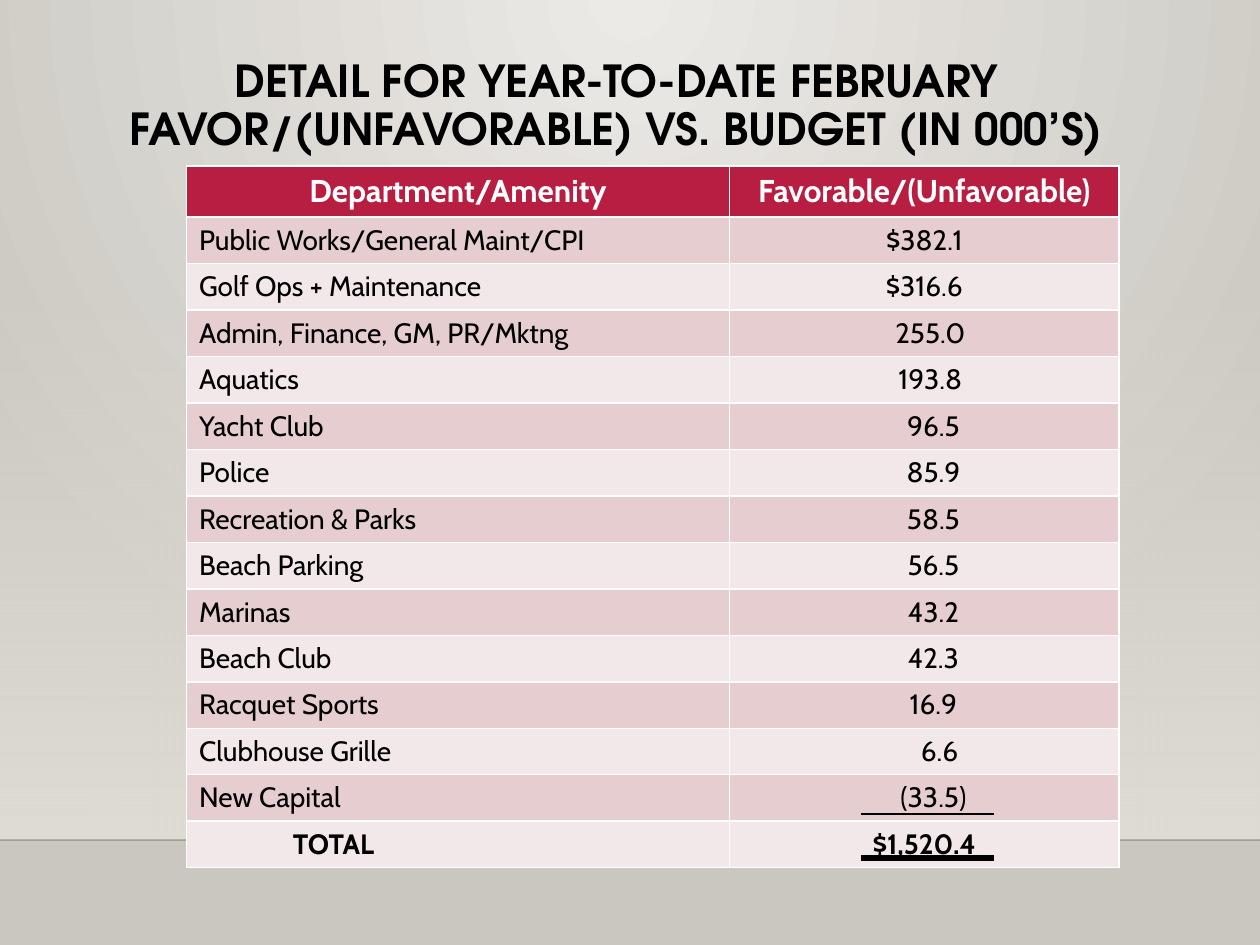
import dataclasses

import pptx
import pptx.dml.color
import pptx.enum.shapes
import pptx.enum.text
import pptx.oxml.ns
import pptx.oxml.xmlchemy
import pptx.util

Pt = pptx.util.Pt
qn = pptx.oxml.ns.qn
new_element = pptx.oxml.xmlchemy.OxmlElement
ALIGN = pptx.enum.text.PP_ALIGN


@dataclasses.dataclass(frozen=True)
class Theme:
    heading_font: str = "TeX Gyre Adventor"
    body_font: str = "Cabin"
    title_size: float = 25.2
    header_size: float = 18
    row_size: float = 16
    ink: str = "000000"
    white: str = "FFFFFF"
    accent: str = "B71E42"
    bands: tuple = ("E6CDCF", "F3E8E9")
    backdrop: tuple = ("ECEAE7", "CAC7C1")
    wall: str = "DFDBD5"


THEME = Theme()
SLIDE_W, SLIDE_H = 720, 540
HEADER_H, ROW_H = 29, 26.57
CELL_MARGIN = 7.2

HEADINGS = ("Department/Amenity", "Favorable/(Unfavorable)")
# Department, amount, indent of the amount
ROWS = [
    ("Public Works/General Maint/CPI", "$382.1", 0),
    ("Golf Ops + Maintenance", "$316.6", 0),
    ("Admin, Finance, GM, PR/Mktng", "255.0", 7),
    ("Aquatics", "193.8", 7),
    ("Yacht Club", "96.5", 10.5),
    ("Police", "85.9", 10.5),
    ("Recreation & Parks", "58.5", 10.5),
    ("Beach Parking", "56.5", 10.5),
    ("Marinas", "43.2", 10.5),
    ("Beach Club", "42.3", 10.5),
    ("Racquet Sports", "16.9", 10.5),
    ("Clubhouse Grille", "6.6", 17.5),
    ("New Capital", "(33.5)", 10.5),
]
TOTAL = ("TOTAL", "$1,520.4")
TOTAL_INDENT = 53.5


def rgb(value):
    return pptx.dml.color.RGBColor.from_string(value)


def write(frame, text, *, size, font=THEME.body_font, color=THEME.ink,
          bold=False, align=ALIGN.LEFT, spacing=None):
    paragraph = frame.paragraphs[0]
    paragraph.text = text
    paragraph.alignment = align
    if spacing:
        paragraph.line_spacing = spacing
    for run in paragraph.runs:
        run.font.name = font
        run.font.size = Pt(size)
        run.font.bold = bold
        run.font.color.rgb = rgb(color)


def set_gradient(fill, colors):
    fill.gradient()
    for stop, color in zip(fill.gradient_stops, colors):
        stop.color.rgb = rgb(color)


def set_alpha(color_element, percent):
    alpha = new_element("a:alpha")
    alpha.set("val", str(percent * 1000))
    color_element.append(alpha)


def add_rule(slide, x1, x2, y, weight, alpha=None):
    rule = slide.shapes.add_connector(
        pptx.enum.shapes.MSO_CONNECTOR.STRAIGHT, Pt(x1), Pt(y), Pt(x2), Pt(y))
    rule.line.color.rgb = rgb(THEME.ink)
    rule.line.width = Pt(weight)
    if alpha is not None:
        set_alpha(next(rule.element.iter(qn("a:srgbClr"))), alpha)
    rule.element.spPr.append(new_element("a:effectLst"))


def add_backdrop(slide, left, top, width, height):
    # Radial light from the top centre
    set_gradient(slide.background.fill, THEME.backdrop)
    gradient = next(slide.element.iter(qn("a:gradFill")))
    gradient.remove(gradient.find(qn("a:lin")))
    glow = new_element("a:path")
    glow.set("path", "circle")
    focus = new_element("a:fillToRect")
    for side, percent in zip("ltrb", (43, 0, 43, 100)):
        focus.set(side, str(percent * 1000))
    glow.append(focus)
    gradient.append(glow)

    # Wall that fades in towards the floor line
    floor = top + height
    wall = slide.shapes.add_shape(
        pptx.enum.shapes.MSO_SHAPE.RECTANGLE,
        Pt(left), Pt(top), Pt(width), Pt(height))
    wall.shadow.inherit = False
    wall.line.fill.background()
    set_gradient(wall.fill, (THEME.wall, THEME.wall))
    wall.fill.gradient_angle = 270
    set_alpha(next(wall.element.spPr.iter(qn("a:srgbClr"))), 0)
    add_rule(slide, left, left + width, floor, 1, alpha=20)


def add_title(slide, left, top, width, height):
    title = slide.shapes.add_textbox(Pt(left), Pt(top), Pt(width), Pt(height))
    frame = title.text_frame
    frame.word_wrap = True
    frame.margin_top = frame.margin_bottom = 0
    write(frame, "DETAIL FOR YEAR-TO-DATE FEBRUARY\v"
          "FAVOR/(UNFAVORABLE) VS. BUDGET (IN 000’S)",
          size=THEME.title_size, font=THEME.heading_font, bold=True,
          align=ALIGN.CENTER, spacing=0.9)


def fill_cell(cell, text, fill, indent=0, **text_format):
    cell.fill.solid()
    cell.fill.fore_color.rgb = rgb(fill)
    cell.margin_left = Pt(CELL_MARGIN + indent)
    write(cell.text_frame, text, **text_format)


def add_budget_table(slide, left, top, column_widths):
    row_count = len(ROWS) + 2
    height = HEADER_H + ROW_H * (row_count - 1)
    table = slide.shapes.add_table(
        row_count, 2, Pt(left), Pt(top),
        Pt(sum(column_widths)), Pt(height)).table
    table.horz_banding = False
    for column, width in zip(table.columns, column_widths):
        column.width = Pt(width)
    for index, row in enumerate(table.rows):
        row.height = Pt(ROW_H if index else HEADER_H)

    for column, heading in enumerate(HEADINGS):
        fill_cell(table.cell(0, column), heading, THEME.accent,
                  size=THEME.header_size, color=THEME.white, bold=True,
                  align=ALIGN.CENTER)

    lines = [(name, 0, amount, indent, False) for name, amount, indent in ROWS]
    lines.append((TOTAL[0], TOTAL_INDENT, TOTAL[1], 0, True))
    for index, (name, name_indent, amount, indent, bold) in enumerate(lines):
        band = THEME.bands[index % 2]
        fill_cell(table.cell(index + 1, 0), name, band, name_indent,
                  size=THEME.row_size, bold=bold)
        fill_cell(table.cell(index + 1, 1), amount, band, indent,
                  size=THEME.row_size, bold=bold, align=ALIGN.CENTER)

    # Rules under the last amount and under the total
    rule_left = left + column_widths[0] + 75
    rule_right = rule_left + 76.3
    bottom = top + height
    add_rule(slide, rule_left, rule_right, bottom - 5.7, 3)
    add_rule(slide, rule_left, rule_right, bottom - 30.9, 1.25)


def main():
    deck = pptx.Presentation()
    deck.slide_width, deck.slide_height = Pt(SLIDE_W), Pt(SLIDE_H)
    slide = deck.slides.add_slide(deck.slide_layouts[6])
    add_backdrop(slide, 0, 158.4, SLIDE_W, 321.6)
    add_title(slide, 56.9, 34, 590.4, 60)
    add_budget_table(slide, 106.6, 95, (310.3, 222.5))
    deck.save("out.pptx")


if __name__ == "__main__":
    main()
